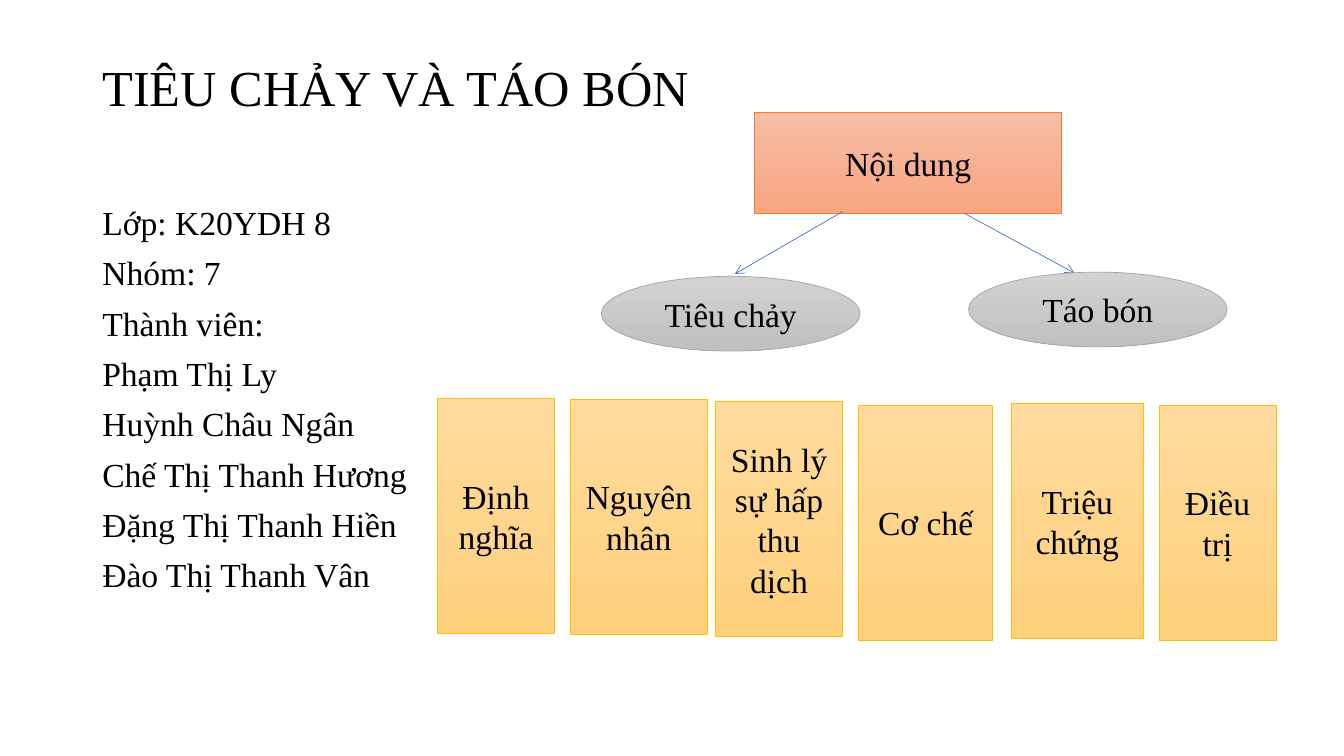
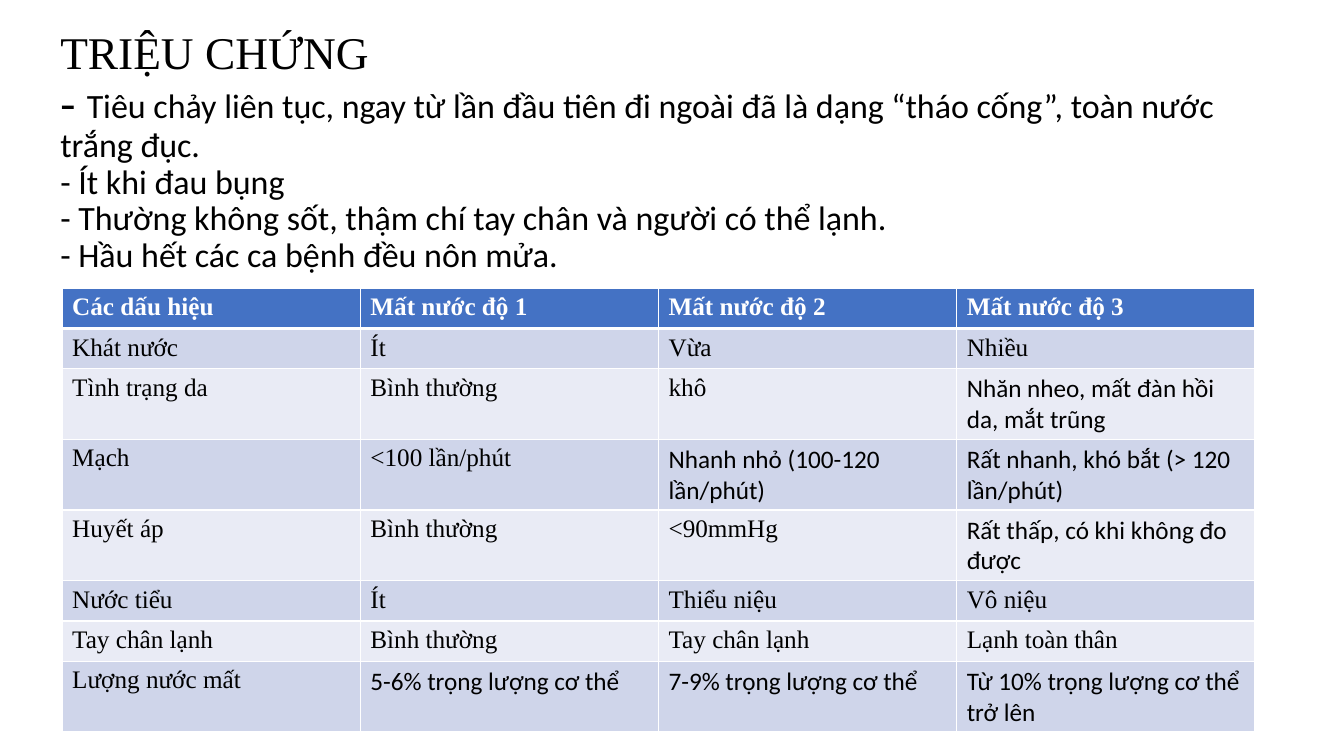
import pptx
import pptx.dml.color
import pptx.enum.shapes
import pptx.enum.text
import pptx.oxml
import pptx.oxml.ns
import pptx.util
from lxml import etree

COLS, ROWS = 160, 90
SERIF, SANS = "Times New Roman", "Calibri"
COLORS = {
    "ink": "000000", "white": "FFFFFF", "blue": "4472C4",
    "band_dark": "CFD5EA", "band_light": "E9EBF5",
}
# Each node style: top colour, bottom colour, outline
NODES = {
    "orange": ("F7BDA5", "F8A582", "ED7D31"),
    "gray": ("D2D2D2", "C0C0C0", "A5A5A5"),
    "gold": ("FFDB9E", "FFD07C", "FFC000"),
}
SHAPE = pptx.enum.shapes.MSO_SHAPE
ALIGN = pptx.enum.text.PP_ALIGN
ANCHOR = pptx.enum.text.MSO_ANCHOR

MEMBERS = [
    "Lớp: K20YDH 8", "Nhóm: 7", "Thành viên:", "Phạm Thị Ly",
    "Huỳnh Châu Ngân", "Chế Thị Thanh Hương", "Đặng Thị Thanh Hiền",
    "Đào Thị Thanh Vân",
]
# Text, left, top, width
TOPICS = [
    ("Định nghĩa", 0.1, 34, 13.9),
    ("Nguyên nhân", 15.9, 34.1, 16.3),
    ("Sinh lý sự hấp thu dịch", 33.2, 34.4, 15.1),
    ("Cơ chế", 50.2, 34.8, 16),
    ("Triệu chứng", 68.4, 34.6, 15.7),
    ("Điều trị", 86, 34.8, 13.9),
]
SYMPTOMS = [
    "Tiêu chảy liên tục, ngay từ lần đầu tiên đi ngoài đã là dạng "
    "“tháo cống”, toàn nước trắng đục.",
    "- Ít khi đau bụng",
    "- Thường không sốt, thậm chí tay chân và người có thể lạnh.",
    "- Hầu hết các ca bệnh đều nôn mửa.",
]
SIGNS = [
    ["Các dấu hiệu", "Mất nước độ 1", "Mất nước độ 2", "Mất nước độ 3"],
    ["Khát nước", "Ít", "Vừa", "Nhiều"],
    ["Tình trạng da", "Bình thường", "khô",
     "Nhăn nheo, mất đàn hồi da, mắt trũng"],
    ["Mạch", "<100 lần/phút", "Nhanh nhỏ (100-120 lần/phút)",
     "Rất nhanh, khó bắt (> 120 lần/phút)"],
    ["Huyết áp", "Bình thường", "<90mmHg", "Rất thấp, có khi không đo được"],
    ["Nước tiểu", "Ít", "Thiểu niệu", "Vô niệu"],
    ["Tay chân lạnh", "Bình thường", "Tay chân lạnh", "Lạnh toàn thân"],
    ["Lượng nước mất", "5-6% trọng lượng cơ thể", "7-9% trọng lượng cơ thể",
     "Từ 10% trọng lượng cơ thể trở lên"],
]
ROW_HEIGHTS = [4.65, 4.65, 8.2, 8.2, 8.2, 4.65, 4.65, 8.2]


def grid(*units):
    """Turn grid units (1/12 inch) into lengths."""
    return [pptx.util.Inches(u / 12) for u in units]


def rgb(value):
    return pptx.dml.color.RGBColor.from_string(value)


def write(tf, paragraphs, size=24, font=SERIF, color="ink", bold=False,
          align=ALIGN.LEFT, anchor=ANCHOR.TOP, spacing=None, before=0):
    """Fill a frame; a paragraph is a string or a list of (text, size, font)."""
    tf.word_wrap = True
    tf.vertical_anchor = anchor
    for i, runs in enumerate(paragraphs):
        p = tf.add_paragraph() if i else tf.paragraphs[0]
        p.alignment = align
        if spacing:
            p.line_spacing = spacing
        if i and before:
            p.space_before = pptx.util.Pt(before)
        if isinstance(runs, str):
            runs = [(runs, size, font)]
        for text, run_size, run_font in runs:
            r = p.add_run()
            r.text = text
            r.font.size = pptx.util.Pt(run_size)
            r.font.name = run_font
            r.font.bold = bold
            r.font.color.rgb = rgb(COLORS[color])


def add_text(slide, box, paragraphs, **fmt):
    sp = slide.shapes.add_textbox(*grid(*box))
    write(sp.text_frame, paragraphs, spacing=0.9, **fmt)


def add_node(slide, kind, box, text, style):
    top, bottom, outline = NODES[style]
    sp = slide.shapes.add_shape(kind, *grid(*box))
    sp.shadow.inherit = False
    sp.fill.gradient()
    sp.fill.gradient_angle = 270
    for stop, value in zip(sp.fill.gradient_stops, (top, bottom)):
        stop.color.rgb = rgb(value)
    sp.line.color.rgb = rgb(outline)
    sp.line.width = pptx.util.Pt(0.5)
    write(sp.text_frame, [text], align=ALIGN.CENTER, anchor=ANCHOR.MIDDLE)


def add_arrow(slide, ends):
    line = slide.shapes.add_connector(
        pptx.enum.shapes.MSO_CONNECTOR.STRAIGHT, *grid(*ends))
    line.line.color.rgb = rgb(COLORS["blue"])
    line.line.width = pptx.util.Pt(0.5)
    qn = pptx.oxml.ns.qn
    etree.SubElement(line.line._get_or_add_ln(), qn("a:tailEnd"), type="arrow")
    etree.SubElement(line._element.spPr, qn("a:effectLst"))


def set_borders(cell, bottom):
    """White cell borders; the bottom one has its own width in points."""
    tc_pr = cell._tc.get_or_add_tcPr()
    widths = {"lnL": 1, "lnR": 1, "lnT": 1, "lnB": bottom}
    for i, (tag, width) in enumerate(widths.items()):
        ln = pptx.oxml.parse_xml(
            f'<a:{tag} {pptx.oxml.ns.nsdecls("a")} w="{width * 12700}">'
            f'<a:solidFill><a:srgbClr val="{COLORS["white"]}"/></a:solidFill>'
            f'</a:{tag}>')
        tc_pr.insert(i, ln)


def content_tree(slide, left, top):
    def at(x, y, w, h):
        return left + x, top + y, w, h

    add_node(slide, SHAPE.RECTANGLE, at(37.8, 0, 36.6, 12), "Nội dung", "orange")
    for x1, y1, x2, y2 in [(48.3, 11.8, 35.5, 19.2), (62.8, 12, 75.9, 19.1)]:
        add_arrow(slide, (left + x1, top + y1, left + x2, top + y2))
    for text, x, y in [("Tiêu chảy", 19.6, 19.5), ("Táo bón", 63.3, 19)]:
        add_node(slide, SHAPE.OVAL, at(x, y, 30.8, 8.9), text, "gray")
    for text, x, y, width in TOPICS:
        add_node(slide, SHAPE.RECTANGLE, at(x, y, width, 28), text, "gold")


def signs_table(slide, left, top, width):
    count = len(SIGNS[0])
    frame = slide.shapes.add_table(
        len(SIGNS), count, *grid(left, top, width, sum(ROW_HEIGHTS)))
    table = frame.table
    for col in table.columns:
        col.width = grid(width / count)[0]
    for i, texts in enumerate(SIGNS):
        table.rows[i].height = grid(ROW_HEIGHTS[i])[0]
        header = i == 0
        fill = "blue" if header else "band_dark" if i % 2 else "band_light"
        for j, text in enumerate(texts):
            cell = table.cell(i, j)
            cell.fill.solid()
            cell.fill.fore_color.rgb = rgb(COLORS[fill])
            write(cell.text_frame, [text], size=18, bold=header,
                  font=SANS if len(text) > 20 else SERIF,
                  color="white" if header else "ink")
            set_borders(cell, bottom=3 if header else 1)


def cover_slide(slide):
    add_text(slide, (11, 4.8, 138, 12), ["TIÊU CHẢY VÀ TÁO BÓN"],
             size=36, anchor=ANCHOR.MIDDLE)
    add_text(slide, (11, 24, 41, 57), MEMBERS, before=10)
    content_tree(slide, 52, 13.4)


def symptoms_slide(slide):
    first, *others = SYMPTOMS
    lead = [("- ", 32.4, SERIF), (first, 24.3, SANS)]
    heading = [("TRIỆU CHỨNG", 32.4, SERIF)]
    add_text(slide, (6, 3, 140, 30), [heading, lead, *others],
             size=24.3, font=SANS)
    signs_table(slide, 7.4, 34.3, 142)


def main():
    prs = pptx.Presentation()
    prs.slide_width, prs.slide_height = grid(COLS, ROWS)
    for build in (cover_slide, symptoms_slide):
        build(prs.slides.add_slide(prs.slide_layouts[6]))
    prs.save("out.pptx")


if __name__ == "__main__":
    main()
